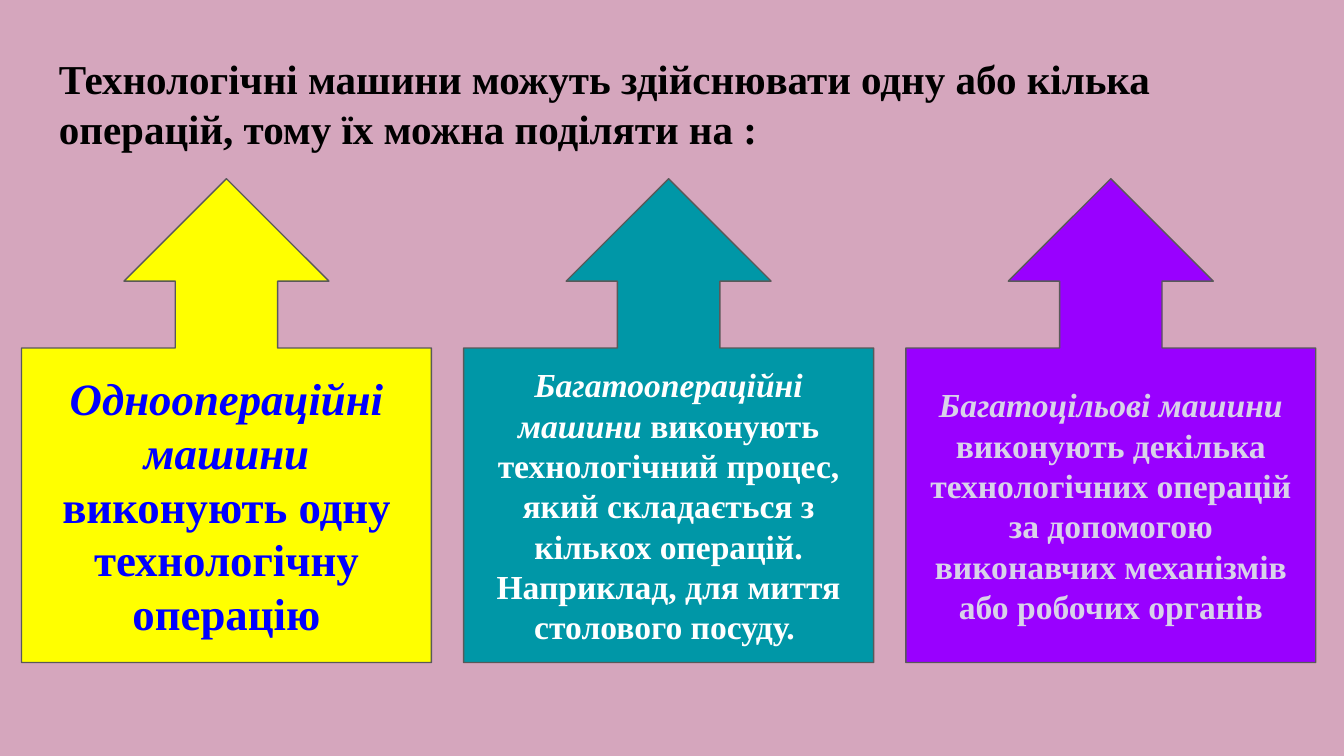
from pptx import Presentation
from pptx.dml.color import RGBColor
from pptx.enum.shapes import MSO_SHAPE
from pptx.enum.text import MSO_ANCHOR, PP_ALIGN
from pptx.util import Inches, Pt

CALLOUT = MSO_SHAPE.UP_ARROW_CALLOUT
MIDDLE = MSO_ANCHOR.MIDDLE
CENTER = PP_ALIGN.CENTER

FONT = "Times New Roman"
PINK = RGBColor(0xD5, 0xA6, 0xBD)
BLACK = RGBColor(0x00, 0x00, 0x00)
GRAY = RGBColor(0x59, 0x59, 0x59)
YELLOW = RGBColor(0xFF, 0xFF, 0x00)
BLUE = RGBColor(0x00, 0x00, 0xFF)
TEAL = RGBColor(0x00, 0x97, 0xA7)
WHITE = RGBColor(0xFF, 0xFF, 0xFF)
PURPLE = RGBColor(0x99, 0x00, 0xFF)
LILAC = RGBColor(0xD9, 0xD2, 0xE9)

TITLE = ("Технологічні машини можуть здійснювати одну або кілька операцій, "
         "тому їх можна поділяти на :")

# Term, meaning, text size, fill, text colour
KINDS = [
    ("Одноопераційні машини",
     " виконують одну технологічну операцію", 24, YELLOW, BLUE),
    ("Багатоопераційні машини",
     " виконують технологічний процес, який складається з кількох операцій. "
     "Наприклад, для миття столового посуду. ", 18, TEAL, WHITE),
    ("Багатоцільові машини",
     " виконують декілька технологічних операцій за допомогою виконавчих "
     "механізмів або робочих органів", 18, PURPLE, LILAC),
]
LEFT, STEP = 0.16, 3.29


def set_frame(frame):
    frame.word_wrap = True
    frame.margin_left = frame.margin_right = Inches(0.1)
    frame.margin_top = frame.margin_bottom = Inches(0.1)


def style_run(run, size, color, italic=False):
    font = run.font
    font.name, font.size, font.bold, font.italic = FONT, Pt(size), True, italic
    font.color.rgb = color


def add_title(slide):
    box = slide.shapes.add_textbox(Inches(0.34), Inches(0.3),
                                   Inches(9.32), Inches(0.96))
    set_frame(box.text_frame)
    box.text_frame.text = TITLE
    style_run(box.text_frame.paragraphs[0].runs[0], 22, BLACK)


def add_callout(slide, left, term, meaning, size, fill, color):
    shape = slide.shapes.add_shape(CALLOUT, Inches(left), Inches(1.33),
                                   Inches(3.05), Inches(3.6))
    for i, value in enumerate((0.25, 0.25, 0.25, 0.65)):
        shape.adjustments[i] = value
    shape.shadow.inherit = False
    shape.fill.solid()
    shape.fill.fore_color.rgb = fill
    shape.line.color.rgb = GRAY
    shape.line.width = Pt(0.75)

    # Italic term, then its meaning
    frame = shape.text_frame
    set_frame(frame)
    frame.vertical_anchor = MIDDLE
    par = frame.paragraphs[0]
    par.alignment = CENTER
    for text, italic in ((term, True), (meaning, False)):
        run = par.add_run()
        run.text = text
        style_run(run, size, color, italic)


def main():
    deck = Presentation()
    # Widescreen, 16 to 9
    deck.slide_width = Inches(10)
    deck.slide_height = Inches(10 * 9 / 16)
    slide = deck.slides.add_slide(deck.slide_layouts[6])
    slide.background.fill.solid()
    slide.background.fill.fore_color.rgb = PINK

    # Title and the three kinds of machine
    add_title(slide)
    for i, kind in enumerate(KINDS):
        add_callout(slide, LEFT + i * STEP, *kind)
    deck.save("out.pptx")


if __name__ == "__main__":
    main()
